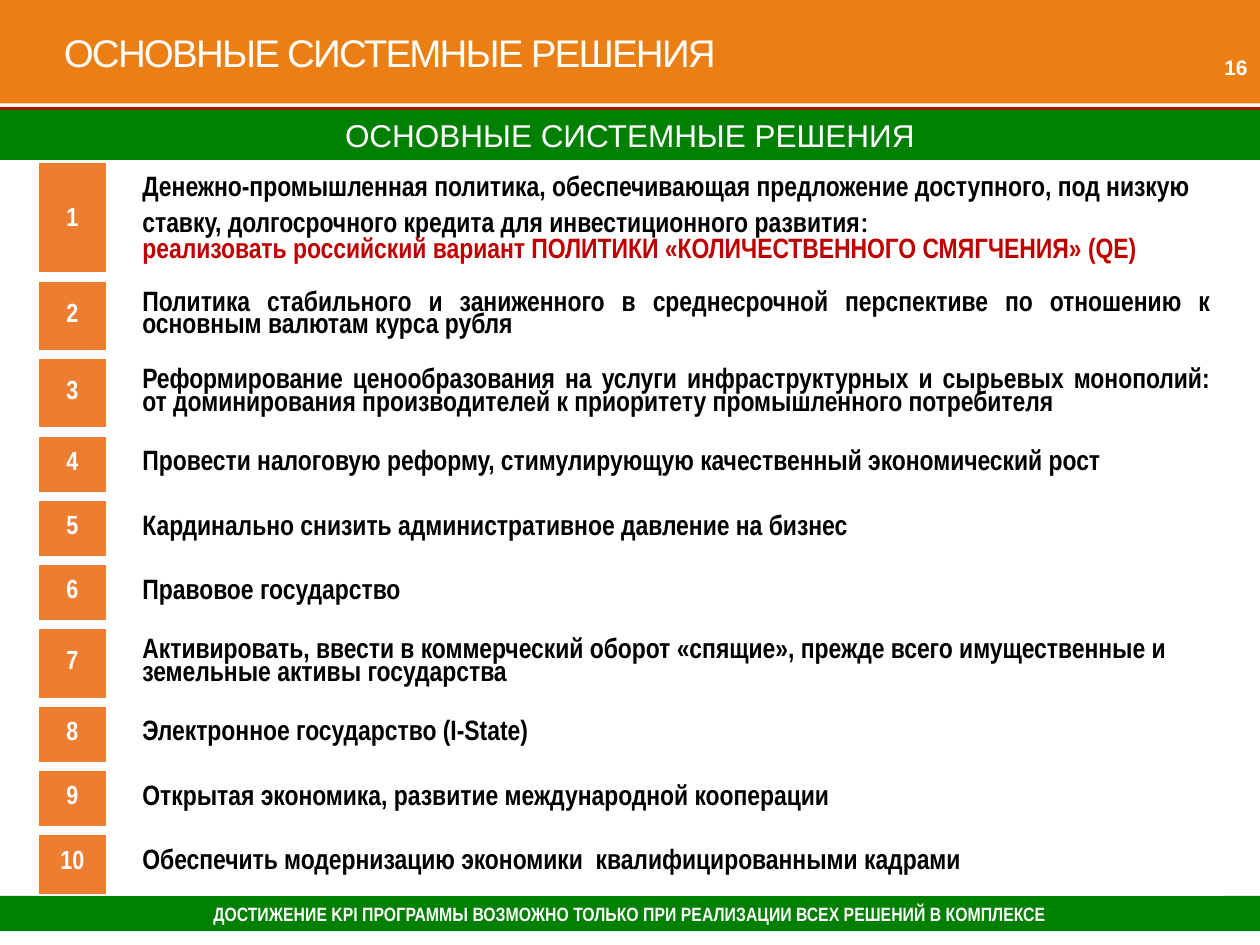
import dataclasses

import pptx
import pptx.dml.color
import pptx.enum.shapes
import pptx.enum.text
import pptx.oxml
import pptx.oxml.ns
import pptx.util

Pt = pptx.util.Pt
Align = pptx.enum.text.PP_ALIGN
MIDDLE = pptx.enum.text.MSO_ANCHOR.MIDDLE


@dataclasses.dataclass(frozen=True)
class Theme:
    orange: str = "EB7F13"
    number_orange: str = "ED7D31"
    green: str = "008000"
    red: str = "C00000"
    white: str = "FFFFFF"
    black: str = "000000"
    font: str = "Arial"
    narrow: str = "Arial Narrow"
    colon_font: str = "Calibri"
    title_size: float = 22
    heading_size: float = 18
    colon_size: float = 18
    body_size: float = 16
    number_size: float = 15
    page_size: float = 12
    footer_size: float = 11


THEME = Theme()
SLIDE_WIDTH = 720
TIGHT = 0.85
TITLE = "ОСНОВНЫЕ СИСТЕМНЫЕ РЕШЕНИЯ"
FOOTER = "ДОСТИЖЕНИЕ KPI ПРОГРАММЫ ВОЗМОЖНО ТОЛЬКО ПРИ РЕАЛИЗАЦИИ ВСЕХ РЕШЕНИЙ В КОМПЛЕКСЕ"
POLICY_GOAL = "реализовать российский вариант ПОЛИТИКИ «КОЛИЧЕСТВЕННОГО СМЯГЧЕНИЯ» (QE)"
TALL, DOUBLE, SINGLE = 65.4, 44.3, 36.72
DECISIONS = [
    ("Денежно-промышленная политика, обеспечивающая предложение доступного, под низкую "
     "ставку, долгосрочного кредита для инвестиционного развития", TALL, Align.LEFT),
    ("Политика стабильного и заниженного в среднесрочной перспективе по отношению к "
     "основным валютам курса рубля", DOUBLE, Align.JUSTIFY),
    ("Реформирование ценообразования на услуги инфраструктурных и сырьевых монополий: "
     "от доминирования производителей к приоритету промышленного потребителя", DOUBLE, Align.JUSTIFY),
    ("Провести налоговую реформу, стимулирующую качественный экономический рост", SINGLE, Align.JUSTIFY),
    ("Кардинально снизить административное давление на бизнес", SINGLE, Align.JUSTIFY),
    ("Правовое государство", SINGLE, Align.JUSTIFY),
    ("Активировать, ввести в коммерческий оборот «спящие», прежде всего имущественные и "
     "земельные активы государства", DOUBLE, Align.LEFT),
    ("Электронное государство (I-State)", SINGLE, Align.JUSTIFY),
    ("Открытая экономика, развитие международной кооперации", SINGLE, Align.JUSTIFY),
    ("Обеспечить модернизацию экономики  квалифицированными кадрами", SINGLE, Align.JUSTIFY),
]


def rgb(color):
    return pptx.dml.color.RGBColor.from_string(color)


def write(paragraph, text, *, size, color, font=THEME.font, bold=False,
          align=None, line_spacing=None, tracking=None):
    run = paragraph.add_run()
    run.text = text
    run.font.size = Pt(size)
    run.font.name = font
    run.font.bold = bold
    run.font.color.rgb = rgb(color)
    if align is not None:
        paragraph.alignment = align
    if line_spacing is not None:
        paragraph.line_spacing = line_spacing
    if tracking is not None:
        run.font._element.set("spc", str(round(tracking * 100)))


def set_frame(frame, left=7.2, top=3.6, right=7.2, bottom=3.6):
    frame.word_wrap = True
    frame.vertical_anchor = MIDDLE
    frame.margin_left, frame.margin_top = Pt(left), Pt(top)
    frame.margin_right, frame.margin_bottom = Pt(right), Pt(bottom)
    return frame.paragraphs[0]


def add_band(slide, top, height, color, text, left_margin=7.2, inset=3.6, **text_format):
    shape = slide.shapes.add_shape(pptx.enum.shapes.MSO_SHAPE.RECTANGLE,
                                   0, Pt(top), Pt(SLIDE_WIDTH), Pt(height))
    shape.shadow.inherit = False
    shape.fill.solid()
    shape.fill.fore_color.rgb = rgb(color)
    shape.line.fill.background()
    paragraph = set_frame(shape.text_frame, left=left_margin, top=inset, bottom=inset)
    write(paragraph, text, color=THEME.white, **text_format)


def add_rule(slide, top):
    line = slide.shapes.add_connector(pptx.enum.shapes.MSO_CONNECTOR.STRAIGHT,
                                      0, Pt(top), Pt(SLIDE_WIDTH), Pt(top))
    line.line.color.rgb = rgb(THEME.red)
    line.line.width = Pt(1.5)
    line._element.spPr.append(pptx.oxml.parse_xml(
        f'<a:effectLst {pptx.oxml.ns.nsdecls("a")}/>'))


def add_page_number(slide, text):
    box = slide.shapes.add_textbox(Pt(656.64), Pt(25.2), Pt(63.36), Pt(25.92))
    write(set_frame(box.text_frame), text, size=THEME.page_size,
          color=THEME.white, bold=True, align=Align.RIGHT)


def set_borders(cell, top, bottom):
    properties = cell._tc.get_or_add_tcPr()
    for side, width in (("L", 1), ("R", 1), ("T", top), ("B", bottom)):
        properties.append(pptx.oxml.parse_xml(
            f'<a:ln{side} {pptx.oxml.ns.nsdecls("a")} w="{Pt(width)}"><a:solidFill>'
            f'<a:srgbClr val="{THEME.white}"/></a:solidFill></a:ln{side}>'))


def prepare_cell(cell, left, row, last, color=None):
    cell.vertical_anchor = MIDDLE
    cell.margin_left, cell.margin_right = Pt(left), Pt(7.2)
    cell.margin_top = cell.margin_bottom = Pt(2.88)
    set_borders(cell, 1 if row == 0 else 6, 1 if row == last else 6)
    if color:
        cell.fill.solid()
        cell.fill.fore_color.rgb = rgb(color)
    else:
        cell.fill.background()
    return cell.text_frame.paragraphs[0]


def add_decisions(slide):
    heights = [height for _, height, _ in DECISIONS]
    table = slide.shapes.add_table(len(DECISIONS), 2, Pt(21.6), Pt(92.88),
                                   Pt(677.52), Pt(sum(heights))).table
    table.first_row = table.horz_banding = False
    table.columns[0].width, table.columns[1].width = Pt(39.6), Pt(637.92)
    last = len(DECISIONS) - 1
    body = dict(size=THEME.body_size, font=THEME.narrow, bold=True)
    for row, (text, height, align) in enumerate(DECISIONS):
        table.rows[row].height = Pt(height)
        number = prepare_cell(table.cell(row, 0), 7.2, row, last, THEME.number_orange)
        write(number, str(row + 1), size=THEME.number_size, color=THEME.white,
              font=THEME.narrow, bold=True, align=Align.CENTER, line_spacing=TIGHT)
        decision = prepare_cell(table.cell(row, 1), 20.16, row, last)
        write(decision, text, color=THEME.black, align=align,
              line_spacing=1.0 if row == 0 else TIGHT, **body)
    write(table.cell(0, 1).text_frame.paragraphs[0], ":", size=THEME.colon_size,
          color=THEME.black, font=THEME.colon_font)
    write(table.cell(0, 1).text_frame.add_paragraph(), POLICY_GOAL,
          color=THEME.red, line_spacing=TIGHT, **body)


def main():
    presentation = pptx.Presentation()
    presentation.slide_width, presentation.slide_height = Pt(SLIDE_WIDTH), Pt(540)
    slide = presentation.slides.add_slide(presentation.slide_layouts[6])
    add_band(slide, 511.92, 20.16, THEME.green, FOOTER, inset=2.88, size=THEME.footer_size,
             font=THEME.narrow, bold=True, align=Align.CENTER)
    add_rule(slide, 61.92)
    add_band(slide, 0, 59.04, THEME.orange, TITLE, left_margin=36.5,
             size=THEME.title_size, align=Align.LEFT, tracking=-1)
    add_decisions(slide)
    add_page_number(slide, "16")
    add_band(slide, 62.64, 28.8, THEME.green, TITLE, size=THEME.heading_size, align=Align.CENTER)
    presentation.save("out.pptx")


if __name__ == "__main__":
    main()
